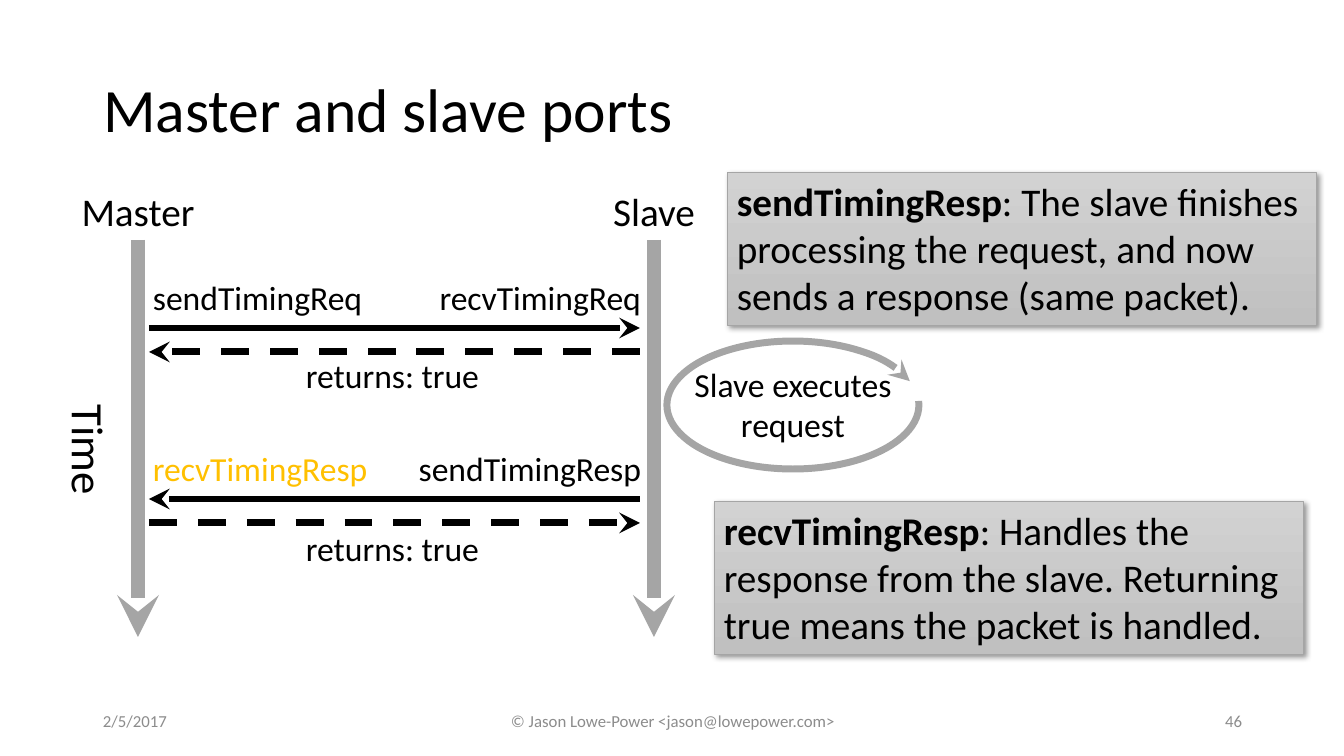
import pptx
import pptx.util
import pptx.dml.color
import pptx.enum.dml
import pptx.enum.shapes
import pptx.enum.text
import pptx.oxml
import pptx.oxml.ns

COLORS = {"ink": "000000", "gray": "A5A5A5", "footer": "8C8C8C", "accent": "FFC000",
          "panel_top": "D2D2D2", "panel_bottom": "C0C0C0"}
ALIGN = pptx.enum.text.PP_ALIGN
ANCHOR = pptx.enum.text.MSO_ANCHOR
SHAPE = pptx.enum.shapes.MSO_SHAPE

# Content; all lengths in px
TITLE = ("Master and slave ports", (93, 40, 1089, 146))
FOOTERS = [
    ("2/5/2017", (93, 701, 302, 40), ALIGN.LEFT),
    ("© Jason Lowe-Power <jason@lowepower.com>", (446, 701, 454, 40), ALIGN.CENTER),
    ("46", (950, 701, 302, 40), ALIGN.RIGHT),
]
LIFELINES = [("Master", 138, 134), ("Slave", 654, 102)]  # name, centre, width
LABEL_TOP, LABEL_HEIGHT, LIFELINE_END = 182, 58, 637
MESSAGE_LEFT, MESSAGE_RIGHT = 149, 640
MESSAGES = [  # y, points right, dashed
    (328, True, False), (352, False, True), (499, False, False), (523, True, True),
]
CALLS = [  # text, left, top, width, alignment, colour
    ("sendTimingReq", 143, 272, 232, ALIGN.LEFT, "ink"),
    ("recvTimingReq", 427, 272, 224, ALIGN.RIGHT, "ink"),
    ("returns: true", 296, 350, 196, ALIGN.LEFT, "ink"),
    ("recvTimingResp", 143, 443, 237, ALIGN.LEFT, "accent"),
    ("sendTimingResp", 406, 443, 245, ALIGN.RIGHT, "ink"),
    ("returns: true", 296, 523, 196, ALIGN.LEFT, "ink"),
]
CALL_HEIGHT = 50
TIME = ("Time", (33, 418, 112, 65))
EXECUTION = ("Slave executes\vrequest", (683, 359, 220, 92))
LOOP_BOX, LOOP_ANGLES = (667, 341, 252, 128), (214.89, 209.08)
PANELS = [
    ("sendTimingResp", ": The slave finishes processing the request, and now sends a response (same packet).", 727, 172),
    ("recvTimingResp", ": Handles the response from the slave. Returning true means the packet is handled.", 714, 501),
]
PANEL_SIZE = (589, 153)


def px(length):
    return pptx.util.Emu(round(length * 914400 / 100.8))


def rgb(name):
    return pptx.dml.color.RGBColor.from_string(COLORS[name])


def write(frame, spans, size, color="ink", align=ALIGN.LEFT, anchor=ANCHOR.TOP, wrap=True):
    """Fill a text frame with one paragraph of (text, bold) spans."""
    for name, value in {"word_wrap": wrap, "vertical_anchor": anchor}.items():
        setattr(frame, name, value)
    para = frame.paragraphs[0]
    para.alignment = align
    for text, bold in spans:
        for index, piece in enumerate(text.split("\v")):
            if index:
                para.add_line_break()
            span = para.add_run()
            span.text = piece
            font = {"name": "Calibri", "size": pptx.util.Pt(size), "bold": bold}
            for name, value in font.items():
                setattr(span.font, name, value)
            span.font.color.rgb = rgb(color)


def add_label(page, text, place, size, **layout):
    box = page.shapes.add_textbox(*map(px, place))
    write(box.text_frame, [(text, False)], size, **layout)
    return box


def style_line(line, color, width, dashed=False):
    """Colour a line and give its far end a stealth arrowhead."""
    line.color.rgb = rgb(color)
    line.width = pptx.util.Pt(width)
    if dashed:
        line.dash_style = pptx.enum.dml.MSO_LINE.DASH
    head = pptx.oxml.ns.qn("a:tailEnd")
    line._get_or_add_ln().append(pptx.oxml.parse_xml(
        f'<a:tailEnd {pptx.oxml.ns.nsdecls("a")} type="stealth"/>'))


def add_arrow(page, start, end, *style):
    arrow = page.shapes.add_connector(
        pptx.enum.shapes.MSO_CONNECTOR.STRAIGHT, *map(px, start + end))
    style_line(arrow.line, *style)
    arrow._element.spPr.append(pptx.oxml.parse_xml(
        f'<a:effectLst {pptx.oxml.ns.nsdecls("a")}/>'))
    return arrow


def add_panel(page, name, meaning, left, top):
    panel = page.shapes.add_shape(SHAPE.RECTANGLE, *map(px, (left, top) + PANEL_SIZE))
    panel.fill.gradient()
    panel.fill.gradient_angle = 270
    for stop, color in zip(panel.fill.gradient_stops, ("panel_top", "panel_bottom")):
        stop.color.rgb = rgb(color)
    panel.line.color.rgb = rgb("gray")
    panel.line.width = pptx.util.Pt(0.5)
    panel._element.spPr.append(pptx.oxml.parse_xml(
        f'<a:effectLst {pptx.oxml.ns.nsdecls("a")}>'
        '<a:outerShdw blurRad="50800" dist="38100" dir="2700000" algn="tl" rotWithShape="0">'
        f'<a:srgbClr val="{COLORS["ink"]}"><a:alpha val="40000"/></a:srgbClr>'
        '</a:outerShdw></a:effectLst>'))
    write(panel.text_frame, [(name, True), (meaning, False)], 28)


def main():
    deck = pptx.Presentation()
    deck.slide_width, deck.slide_height = px(1344), px(756)
    page = deck.slides.add_slide(deck.slide_layouts[5])

    title, place = TITLE
    heading = page.shapes.title
    for name, length in zip(("left", "top", "width", "height"), place):
        setattr(heading, name, px(length))
    write(heading.text_frame, [(title, False)], 44, anchor=ANCHOR.MIDDLE)
    heading.text_frame.paragraphs[0].line_spacing = 0.9

    for text, place, align in FOOTERS:
        add_label(page, text, place, 12, color="footer", align=align, anchor=ANCHOR.MIDDLE)

    for name, center, width in LIFELINES:
        label = add_label(page, name, (center - width / 2, LABEL_TOP, width, LABEL_HEIGHT),
                          28, align=ALIGN.CENTER, wrap=False)
        lifeline = add_arrow(page, (center, LABEL_TOP + LABEL_HEIGHT),
                             (center, LIFELINE_END), "gray", 10)
        lifeline.begin_connect(label, 2)

    for y, rightward, dashed in MESSAGES:
        ends = [(MESSAGE_LEFT, y), (MESSAGE_RIGHT, y)]
        start, end = ends if rightward else reversed(ends)
        add_arrow(page, start, end, "ink", 5, dashed)

    for text, left, top, width, align, color in CALLS:
        add_label(page, text, (left, top, width, CALL_HEIGHT), 24,
                  color=color, align=align, wrap=False)

    add_label(page, *TIME, 32, wrap=False).rotation = 90

    execution = add_label(page, *EXECUTION, 24, align=ALIGN.CENTER, wrap=False)
    loop = page.shapes.add_shape(SHAPE.ARC, *map(px, LOOP_BOX))
    loop.shadow.inherit = False
    loop.fill.background()
    for index, angle in enumerate(LOOP_ANGLES):
        loop.adjustments[index] = angle
    style_line(loop.line, "gray", 5)
    page.shapes.add_group_shape([execution, loop])

    for panel in PANELS:
        add_panel(page, *panel)

    deck.save("out.pptx")


if __name__ == "__main__":
    main()
